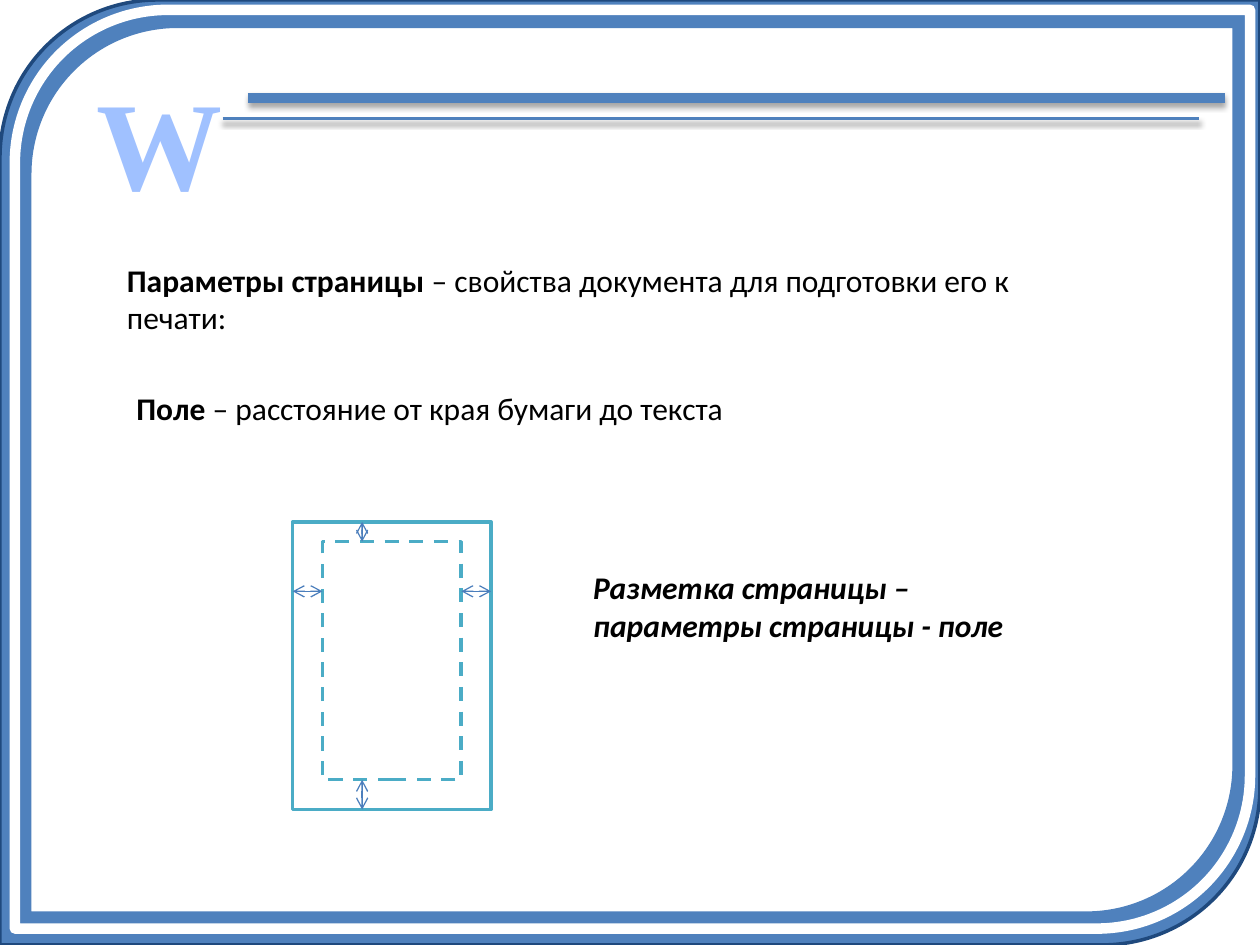
from collections import namedtuple

from lxml.etree import SubElement
from pptx import Presentation
from pptx.dml.color import RGBColor
from pptx.enum.dml import MSO_LINE
from pptx.enum.shapes import MSO_CONNECTOR, MSO_SHAPE
from pptx.enum.text import MSO_AUTO_SIZE, PP_ALIGN
from pptx.oxml.ns import qn
from pptx.util import Cm, Pt

BLUE = RGBColor(0x4F, 0x81, 0xBD)
NAVY = RGBColor(0x1F, 0x49, 0x7D)
TEAL = RGBColor(0x4B, 0xAC, 0xC6)
ARROW_BLUE = RGBColor(0x4B, 0x7E, 0xBC)
LETTER_BLUE = RGBColor(0xA0, 0xC1, 0xFF)
WHITE = RGBColor(0xFF, 0xFF, 0xFF)
BLACK = RGBColor(0, 0, 0)

# All lengths are centimetres
Box = namedtuple("Box", "left top width height")


def inset(box, left, top, right, bottom):
    return Box(box.left + left, box.top + top,
               box.width - left - right, box.height - top - bottom)


def add_outline(slide, preset, box, line, weight, fill=None, dash=None):
    shape = slide.shapes.add_shape(preset, *map(Cm, box))
    shape.shadow.inherit = False
    if fill is None:
        shape.fill.background()
    else:
        shape.fill.solid()
        shape.fill.fore_color.rgb = fill
    shape.line.color.rgb = line
    shape.line.width = Pt(weight)
    if dash is not None:
        shape.line.dash_style = dash


def add_line(slide, start, end, color, weight):
    """Draw a straight line with an empty effect list; return both."""
    line = slide.shapes.add_connector(MSO_CONNECTOR.STRAIGHT, *map(Cm, start + end))
    line.line.color.rgb = color
    line.line.width = Pt(weight)
    effects = SubElement(line._element.spPr, qn("a:effectLst"))
    return line, effects


def add_shadowed_rule(slide, left, top, length, weight):
    _, effects = add_line(slide, (left, top), (left + length, top), BLUE, weight)
    shadow = SubElement(effects, qn("a:outerShdw"), blurRad=str(Pt(3.1)),
                        dist=str(Pt(1.8)), dir="5400000", rotWithShape="0")
    black = SubElement(shadow, qn("a:srgbClr"), val="000000")
    SubElement(black, qn("a:alpha"), val="35000")


def add_double_arrow(slide, start, end):
    arrow, _ = add_line(slide, start, end, ARROW_BLUE, 0.75)
    stroke = arrow.line._get_or_add_ln()
    for tag in ("a:headEnd", "a:tailEnd"):
        SubElement(stroke, qn(tag), type="arrow")


def add_text(slide, box, *parts, font="Calibri", size=18, color=BLACK,
             bold_parts=1, italic=False, align=PP_ALIGN.LEFT):
    """Write the parts as one paragraph, the first bold_parts of them bold."""
    frame = slide.shapes.add_textbox(*map(Cm, box)).text_frame
    frame.word_wrap = True
    frame.auto_size = MSO_AUTO_SIZE.SHAPE_TO_FIT_TEXT
    paragraph = frame.paragraphs[0]
    paragraph.alignment = align
    for index, part in enumerate(parts):
        run = paragraph.add_run()
        run.text = part
        run.font.name = font
        run.font.size = Pt(size)
        run.font.color.rgb = color
        run.font.bold = index < bold_parts
        run.font.italic = italic


def draw_frame(slide, box):
    rounded = MSO_SHAPE.ROUND_2_DIAG_RECTANGLE
    add_outline(slide, rounded, box, NAVY, 2, fill=BLUE)
    add_outline(slide, rounded, inset(box, 0.6, 0.53, 0.52, 0.64), BLUE, 2, fill=WHITE)
    add_outline(slide, rounded, inset(box, 0.3, 0.2, 0.2, 0.33), WHITE, 6)


def draw_header(slide, box):
    add_text(slide, Box(box.left, box.top, 4, 3.43), "W", font="Times New Roman",
             size=72, color=LETTER_BLUE, align=PP_ALIGN.CENTER)
    rule_length = 19.69
    right = box.left + box.width
    add_shadowed_rule(slide, right - rule_length, box.top + 0.81, rule_length, 6)
    add_shadowed_rule(slide, right - rule_length - 0.51, box.top + 1.22,
                      rule_length, 2.25)


def draw_definitions(slide, box):
    add_text(slide, Box(box.left, box.top, box.width, 1.8), "Параметры страницы ",
             "– свойства документа для подготовки его к печати:")
    add_text(slide, Box(box.left + 0.19, box.top + 2.59, box.width, 1.02), "Поле",
             " – расстояние от края бумаги до текста")


def draw_page_margins(slide, page):
    """Draw a sheet, its text area and an arrow across each margin."""
    side, top, bottom = 0.6, 0.4, 0.6
    area = inset(page, side, top, side, bottom)
    add_outline(slide, MSO_SHAPE.RECTANGLE, page, TEAL, 2, fill=WHITE)
    add_outline(slide, MSO_SHAPE.RECTANGLE, area, TEAL, 2, fill=WHITE,
                dash=MSO_LINE.DASH)
    x, y = page.left + 1.4, page.top + 1.4
    for left, margin in ((page.left, side), (area.left + area.width, side)):
        add_double_arrow(slide, (left, y), (left + margin, y))
    for upper, margin in ((page.top, top), (area.top + area.height, bottom)):
        add_double_arrow(slide, (x, upper), (x, upper + margin))


def main():
    deck = Presentation()
    slide_box = Box(0, 0, 25.4, 19.05)
    deck.slide_width, deck.slide_height = Cm(slide_box.width), Cm(slide_box.height)
    blank_layout = deck.slide_layouts[6]
    slide = deck.slides.add_slide(blank_layout)

    draw_frame(slide, slide_box)
    draw_header(slide, Box(1.22, 1.17, 23.47, 3.43))
    draw_definitions(slide, Box(2.31, 5.13, 18.6, 3.61))
    draw_page_margins(slide, Box(5.9, 10.52, 4, 5.8))
    add_text(slide, Box(11.71, 11.33, 9.8, 1.8),
             "Разметка страницы – параметры страницы - поле", italic=True)
    deck.save("out.pptx")


if __name__ == "__main__":
    main()
